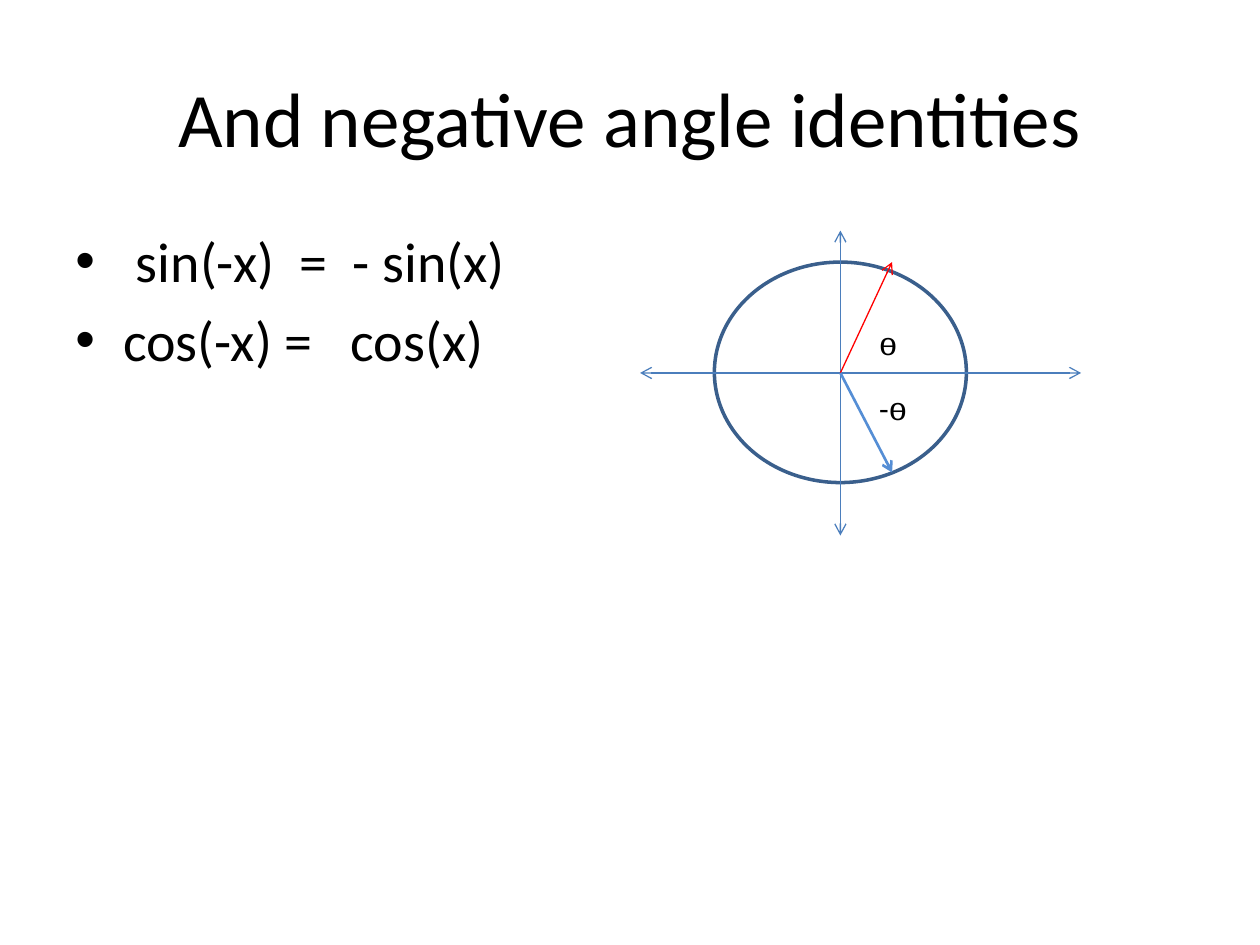
from lxml import etree
from pptx import Presentation
from pptx.dml.color import RGBColor
from pptx.enum.shapes import MSO_CONNECTOR, MSO_SHAPE
from pptx.enum.text import MSO_ANCHOR, PP_ALIGN
from pptx.oxml.ns import qn
from pptx.util import Inches, Pt

STRAIGHT = MSO_CONNECTOR.STRAIGHT
OVAL = MSO_SHAPE.OVAL
MIDDLE = MSO_ANCHOR.MIDDLE
CENTER = PP_ALIGN.CENTER

COLORS = {
    "text": "000000",
    "circle": "3A5F8C",
    "axis": "4B7EBC",
    "positive": "FF0000",
    "negative": "558ED5",
}
ORIGIN = (6.67, 2.96)


def color(name):
    return RGBColor.from_string(COLORS[name])


def format_span(span, size, font="Calibri"):
    span.font.size = Pt(size)
    span.font.name = font
    span.font.color.rgb = color("text")


def set_title(page, text):
    title = page.shapes.title
    title.left, title.top = Inches(0.5), Inches(0.3)
    title.width, title.height = Inches(9), Inches(1.25)
    title.text_frame.text = text
    title.text_frame.vertical_anchor = MIDDLE
    para = title.text_frame.paragraphs[0]
    para.alignment = CENTER
    format_span(para.runs[0], 44)


def add_text_box(page, left, top, width, height):
    box = page.shapes.add_textbox(Inches(left), Inches(top), Inches(width), Inches(height))
    box.text_frame.word_wrap = True
    return box.text_frame


def add_bullets(page, lines):
    frame = add_text_box(page, 0.5, 1.75, 9, 4.95)
    frame.text = "\n".join(lines)
    for para in frame.paragraphs:
        para.space_before = Pt(6.4)
        format_span(para.runs[0], 32)
        properties = para._p.get_or_add_pPr()
        properties.set("marL", str(Inches(0.38)))
        properties.set("indent", str(Inches(-0.38)))
        etree.SubElement(properties, qn("a:buFont"), typeface="Arial")
        etree.SubElement(properties, qn("a:buChar"), char="•")


def add_circle(page):
    circle = page.shapes.add_shape(OVAL, Inches(5.67), Inches(2.08), Inches(2), Inches(1.75))
    circle.shadow.inherit = False
    circle.fill.background()
    circle.line.color.rgb = color("circle")
    circle.line.width = Pt(2)


def add_arrow(page, start, end, color_name, width=0.75, both_ends=False):
    points = [Inches(value) for value in (*start, *end)]
    arrow = page.shapes.add_connector(STRAIGHT, *points)
    arrow.line.color.rgb = color(color_name)
    arrow.line.width = Pt(width)
    outline = arrow.line._get_or_add_ln()
    for tag in ("a:headEnd", "a:tailEnd") if both_ends else ("a:tailEnd",):
        etree.SubElement(outline, qn(tag), type="arrow")
    etree.SubElement(arrow._element.spPr, qn("a:effectLst"))


def add_angle_label(page, top, spans):
    para = add_text_box(page, 6.88, top, 0.54, 0.4).paragraphs[0]
    for text, font in spans:
        span = para.add_run()
        span.text = text
        format_span(span, 18, font)


def main():
    deck = Presentation()
    deck.slide_width, deck.slide_height = Inches(10), Inches(7.5)
    page = deck.slides.add_slide(deck.slide_layouts[5])
    set_title(page, "And negative angle identities")
    add_bullets(page, [" sin(-x)  =  - sin(x)", "cos(-x) =   cos(x)"])

    add_circle(page)
    x, y = ORIGIN
    add_arrow(page, (5.08, y), (8.58, y), "axis", both_ends=True)
    add_arrow(page, (x, 1.83), (x, 4.25), "axis", both_ends=True)
    add_arrow(page, ORIGIN, (7.08, 2.08), "positive")
    add_arrow(page, ORIGIN, (7.08, 3.75), "negative", width=1.5)

    theta = ("ө", "Cambria")
    add_angle_label(page, 2.52, [theta])
    add_angle_label(page, 3.04, [("-", "Calibri"), theta])
    deck.save("out.pptx")


if __name__ == "__main__":
    main()
